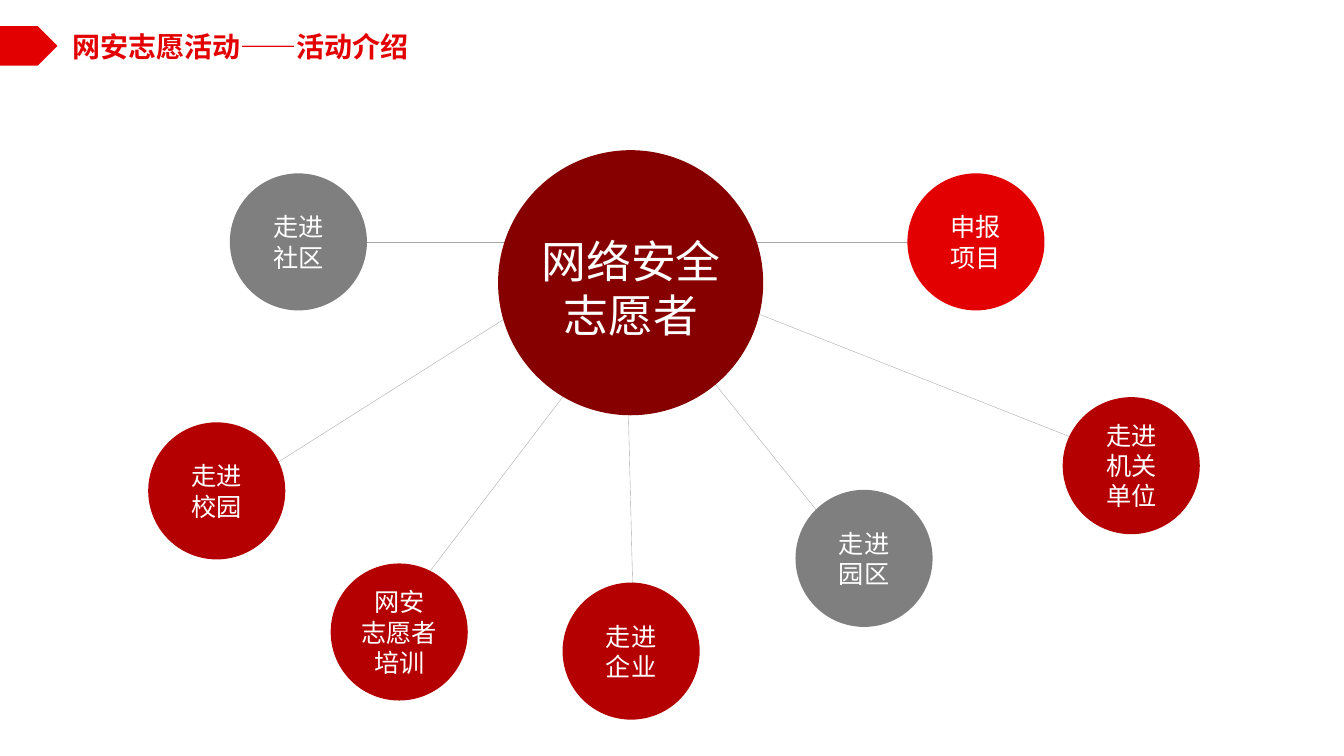
import pptx
import pptx.util
import pptx.dml.color
import pptx.enum.shapes
import pptx.enum.text
import pptx.oxml.ns
import lxml.etree
from dataclasses import dataclass

Inches = pptx.util.Inches
Shapes = pptx.enum.shapes.MSO_SHAPE
Anchor = pptx.enum.text.MSO_ANCHOR
Align = pptx.enum.text.PP_ALIGN
qn = pptx.oxml.ns.qn

FONT = "Noto Sans CJK SC"
COLORS = {
    "red": "E20000",
    "crimson": "B40000",
    "maroon": "870000",
    "gray": "7F7F7F",
    "line": "A6A6A6",
    "white": "FFFFFF",
}
ACTIVITY_SIZE = 1.36


@dataclass
class Activity:
    lines: str
    left: float
    top: float
    color: str


@dataclass
class Spoke:
    start: tuple[float, float]
    end: tuple[float, float]


ACTIVITIES = [
    Activity("走进\n社区", 2.28, 1.72, "gray"),
    Activity("申报\n项目", 9, 1.72, "red"),
    Activity("走进\n机关\n单位", 10.54, 3.94, "crimson"),
    Activity("走进\n园区", 7.89, 4.86, "gray"),
    Activity("走进\n企业", 5.58, 5.78, "crimson"),
    Activity("走进\n校园", 1.47, 4.19, "crimson"),
    Activity("网安\n志愿者\n培训", 3.28, 5.59, "crimson"),
]
SPOKES = [
    Spoke((5.74, 3.73), (4.27, 5.66)),
    Spoke((7.13, 2.96), (11.29, 4.6)),
    Spoke((5.31, 2.4), (3.03, 2.4)),
    Spoke((8.57, 5.65), (6.78, 3.42)),
    Spoke((6.3, 6.82), (6.22, 3.59)),
    Spoke((5.31, 2.97), (2.75, 4.59)),
    Spoke((9.47, 2.4), (7.13, 2.4)),
]


def rgb(name: str) -> pptx.dml.color.RGBColor:
    return pptx.dml.color.RGBColor.from_string(COLORS[name])


def write_text(shape, text: str, size: float, color: str, align=Align.CENTER, bold: bool = False) -> None:
    frame = shape.text_frame
    frame.word_wrap = True
    frame.text = text
    for para in frame.paragraphs:
        para.alignment = align
        for span in para.runs:
            span.font.name = FONT
            span.font.size = pptx.util.Pt(size)
            span.font.bold = bold
            span.font.color.rgb = rgb(color)
            east_asian = lxml.etree.SubElement(span.font._element, qn("a:ea"))
            east_asian.set("typeface", FONT)


def add_filled(page, kind, left: float, top: float, width: float, height: float, color: str):
    shape = page.shapes.add_shape(kind, Inches(left), Inches(top), Inches(width), Inches(height))
    shape.shadow.inherit = False
    shape.fill.solid()
    shape.fill.fore_color.rgb = rgb(color)
    shape.line.fill.background()
    return shape


def add_label(page, left: float, top: float, width: float, height: float):
    return page.shapes.add_textbox(Inches(left), Inches(top), Inches(width), Inches(height))


def add_spoke(page, spoke: Spoke) -> None:
    line = page.shapes.add_connector(
        pptx.enum.shapes.MSO_CONNECTOR.STRAIGHT,
        *(Inches(value) for value in spoke.start + spoke.end),
    )
    line.line.color.rgb = rgb("line")
    line.line.width = pptx.util.Pt(0.25)
    lxml.etree.SubElement(line._element.spPr, qn("a:effectLst"))


def add_activity(page, activity: Activity) -> None:
    circle = add_filled(
        page, Shapes.OVAL, activity.left, activity.top, ACTIVITY_SIZE, ACTIVITY_SIZE, activity.color
    )
    frame = circle.text_frame
    frame.margin_left = frame.margin_right = frame.margin_top = frame.margin_bottom = 0
    frame.vertical_anchor = Anchor.MIDDLE
    write_text(circle, activity.lines, 18, "white")


def main() -> None:
    deck = pptx.Presentation()
    deck.slide_width = Inches(13.33)
    deck.slide_height = Inches(7.5)
    page = deck.slides.add_slide(deck.slide_layouts[6])

    add_filled(page, Shapes.PENTAGON, 0, 0.26, 0.57, 0.39, "red")
    title = add_label(page, 0.62, 0.24, 4.16, 0.44)
    write_text(title, "网安志愿活动——活动介绍", 20, "red", Align.LEFT, True)

    for spoke in SPOKES:
        add_spoke(page, spoke)

    add_filled(page, Shapes.OVAL, 4.94, 1.49, 2.63, 2.63, "maroon")
    hub_label = add_label(page, 5.17, 2.27, 2.18, 1.18)
    write_text(hub_label, "网络安全志愿者", 32, "white")

    for activity in ACTIVITIES:
        add_activity(page, activity)

    deck.save("out.pptx")


if __name__ == "__main__":
    main()
